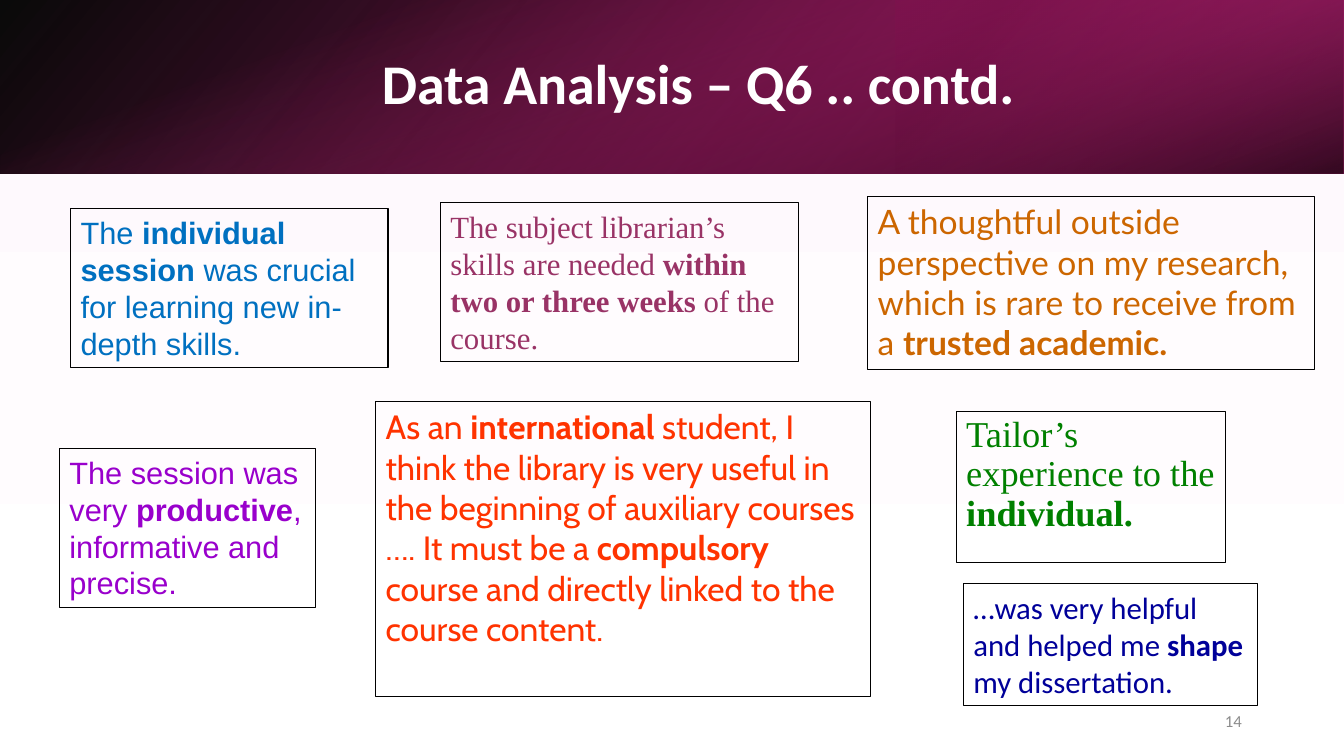
from dataclasses import dataclass

from lxml.etree import SubElement
from pptx import Presentation
from pptx.dml.color import RGBColor
from pptx.enum.shapes import MSO_SHAPE
from pptx.enum.text import MSO_ANCHOR, PP_ALIGN
from pptx.oxml.ns import qn
from pptx.util import Cm, Pt


@dataclass(frozen=True)
class Box:
    left: float
    top: float
    width: float
    height: float

    def lengths(self):
        return Cm(self.left), Cm(self.top), Cm(self.width), Cm(self.height)

    def inner(self, left, top, width, height):
        return Box(self.left + left, self.top + top, width, height)


@dataclass(frozen=True)
class TextStyle:
    font: str
    size: float
    color: str
    bold: bool = False
    spacing: float = 1.0


@dataclass(frozen=True)
class Theme:
    page_top: str = "FEF9FD"
    page_bottom: str = "FFFFFF"
    black: str = "000000"
    berry: str = "B4186E"
    plum: str = "781049"
    pink: str = "E32D91"
    border: float = 0.75
    title: TextStyle = TextStyle("Calibri", 40, "FFFFFF", True, 0.9)
    number: TextStyle = TextStyle("Calibri", 12, "8C8C8C")
    crucial: TextStyle = TextStyle("Arial", 22, "0070C0")
    librarian: TextStyle = TextStyle("Times New Roman", 22, "993366")
    outside: TextStyle = TextStyle("Lato", 24, "CC6600")
    productive: TextStyle = TextStyle("Arial", 22, "9900CC")
    international: TextStyle = TextStyle("Cabin", 24, "FF3300")
    tailored: TextStyle = TextStyle("Times New Roman", 26, "008000", spacing=0.9)
    helpful: TextStyle = TextStyle("Calibri", 22, "000099")


THEME = Theme()
PAGE = Box(0, 0, 33.87, 19.05)
HEADER = Box(0, 0, PAGE.width, 4.37)

QUOTES = [
    (Box(1.78, 5.26, 8, 4.01), THEME.crucial,
     ["The ", "individual session ", "was crucial for learning new in- depth skills."]),
    (Box(11.1, 5.11, 9.02, 4.01), THEME.librarian,
     ["The subject librarian’s skills are needed ", "within two or three weeks ",
      "of the course."]),
    (Box(21.87, 4.95, 11.25, 4.37), THEME.outside,
     ["A thoughtful outside perspective on my research, which is rare to receive from a ",
      "trusted academic."]),
    (Box(1.5, 11.3, 6.45, 4.01), THEME.productive,
     ["The session was very ", "productive", ", informative and precise."]),
    (Box(9.47, 10.11, 12.47, 7.44), THEME.international,
     ["As an ", "international",
      " student, I think the library is very useful in the beginning of "
      "auxiliary courses …. It must be a ",
      "compulsory", " course and directly linked to the course content."]),
    (Box(24.1, 10.36, 6.78, 3.81), THEME.tailored,
     ["Tailor’s experience to the ", "individual."]),
    (Box(24.28, 14.71, 7.42, 3.07), THEME.helpful,
     ["…was very helpful and helped me ", "shape ", "my dissertation."]),
]


def fill_gradient(fill, angle, stops):
    fill.gradient()
    fill.gradient_angle = (360 - angle) % 360
    for stop, (position, color, _) in zip(fill.gradient_stops, stops):
        stop.position = position / 100
        stop.color.rgb = RGBColor.from_string(color)


def add_gradient_band(slide, box, angle, stops, rotation=0, flipped=False):
    band = slide.shapes.add_shape(MSO_SHAPE.RECTANGLE, *box.lengths())
    band.shadow.inherit = False
    band.line.fill.background()
    band.rotation = rotation
    if flipped:
        band.element.spPr.find(qn("a:xfrm")).set("flipH", "1")
    fill_gradient(band.fill, angle, stops)
    colors = band.element.spPr.find(qn("a:gradFill")).iter(qn("a:srgbClr"))
    for color, (_, _, opacity) in zip(list(colors), stops):
        SubElement(color, qn("a:alpha")).set("val", str(opacity * 1000))


def add_text(slide, box, style, parts, align=PP_ALIGN.LEFT, anchor=MSO_ANCHOR.TOP):
    holder = slide.shapes.add_textbox(*box.lengths())
    frame = holder.text_frame
    frame.word_wrap = True
    frame.vertical_anchor = anchor
    paragraph = frame.paragraphs[0]
    paragraph.alignment = align
    paragraph.line_spacing = style.spacing
    paragraph.font.name = style.font
    paragraph.font.size = Pt(style.size)
    paragraph.font.color.rgb = RGBColor.from_string(style.color)
    paragraph.font.bold = style.bold
    for index, part in enumerate(parts):
        run = paragraph.add_run()
        run.text = part
        if index % 2:
            run.font.bold = True
    return holder


def add_header(slide, box):
    add_gradient_band(slide, box, 140,
                      [(0, THEME.black, 96), (100, THEME.berry, 100)], flipped=True)
    third = box.width / 3
    add_gradient_band(slide, box.inner(2 * third, 0, third, box.height), 320,
                      [(19, THEME.plum, 68), (100, THEME.pink, 79)],
                      rotation=180, flipped=True)
    offset = (box.width - box.height) / 2
    add_gradient_band(slide, box.inner(offset, -offset, box.height, box.width), 340,
                      [(23, THEME.pink, 0), (99, THEME.black, 74)], rotation=90)
    add_text(slide, box.inner(3.81, 0.96, 27.89, 2.44), THEME.title,
             ["Data Analysis – Q6 .. contd. "], PP_ALIGN.CENTER, MSO_ANCHOR.MIDDLE)


def add_quote(slide, box, style, parts):
    quote = add_text(slide, box, style, parts)
    quote.line.color.rgb = RGBColor.from_string(THEME.black)
    quote.line.width = Pt(THEME.border)


def add_page_number(slide, box):
    add_text(slide, box.inner(23.93, 17.65, 7.62, 1.02), THEME.number,
             ["14"], PP_ALIGN.RIGHT, MSO_ANCHOR.MIDDLE)


def main():
    deck = Presentation()
    deck.slide_width, deck.slide_height = Cm(PAGE.width), Cm(PAGE.height)
    slide = deck.slides.add_slide(deck.slide_layouts[6])
    fill_gradient(slide.background.fill, 90,
                  [(0, THEME.page_top, 100), (100, THEME.page_bottom, 100)])
    add_header(slide, HEADER)
    for box, style, parts in QUOTES:
        add_quote(slide, box, style, parts)
    add_page_number(slide, PAGE)
    deck.save("out.pptx")


if __name__ == "__main__":
    main()
